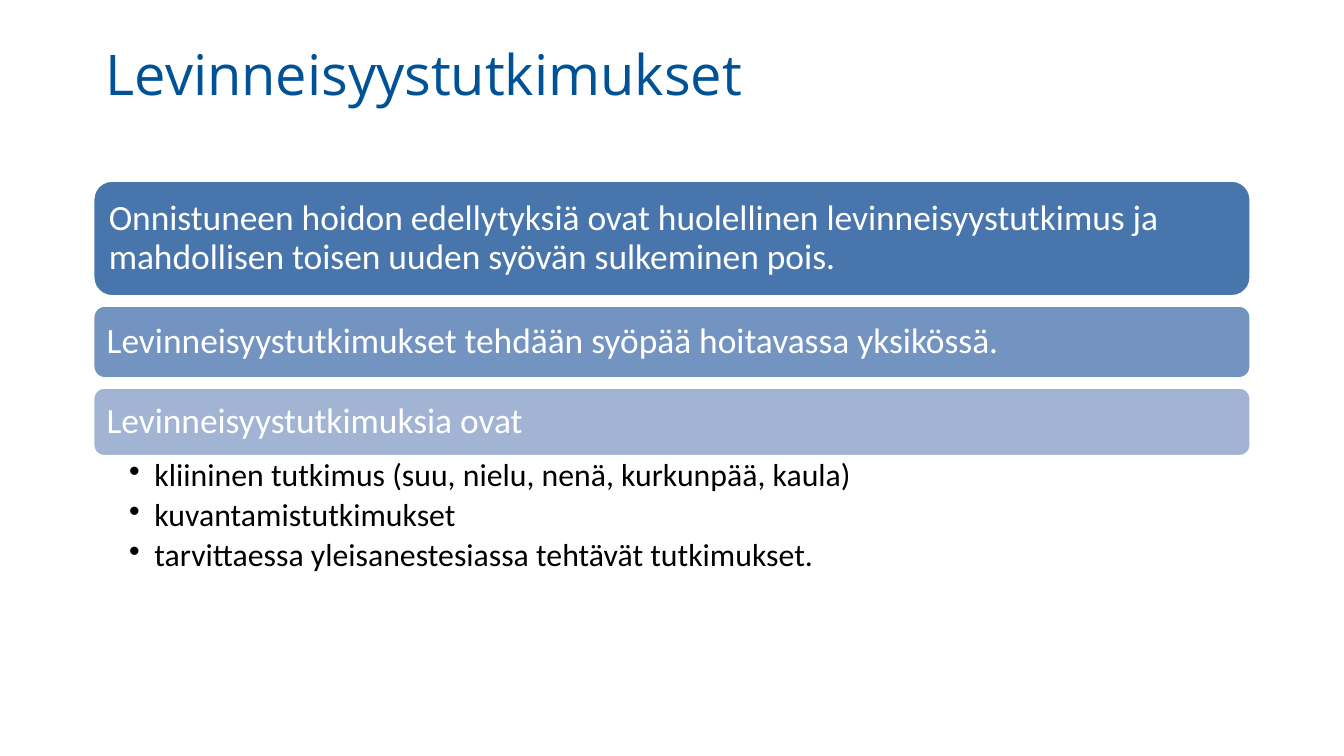
"""Build the slide on staging examinations."""
from lxml import etree
from pptx import Presentation
from pptx.dml.color import RGBColor
from pptx.enum.shapes import MSO_SHAPE
from pptx.enum.text import MSO_ANCHOR, MSO_AUTO_SIZE, PP_ALIGN
from pptx.oxml.ns import qn
from pptx.util import Cm, Pt

ROUND = MSO_SHAPE.ROUNDED_RECTANGLE
MIDDLE, TOP = MSO_ANCHOR.MIDDLE, MSO_ANCHOR.TOP
LEFT = PP_ALIGN.LEFT
FIXED = MSO_AUTO_SIZE.NONE

TITLE = "Levinneisyystutkimukset"
BARS = [
    ("Onnistuneen hoidon edellytyksiä ovat huolellinen levinneisyystutkimus ja "
     "mahdollisen toisen uuden syövän sulkeminen pois.", 2.21, "4875AC"),
    ("Levinneisyystutkimukset tehdään syöpää hoitavassa yksikössä.", 1.4, "7393C1"),
    ("Levinneisyystutkimuksia ovat", 1.32, "A2B4D4"),
]
EXAMS = [
    "kliininen tutkimus (suu, nielu, nenä, kurkunpää, kaula)",
    "kuvantamistutkimukset",
    "tarvittaessa yleisanestesiassa tehtävät tutkimukset.",
]
THEME = {
    "title": ("Open Sans", 30, "005296"),
    "bar": ("Calibri", 19, "FFFFFF"),
    "list": ("Calibri", 17, "000000"),
    "edge": "FFFFFF",
}
X, WIDTH = 1.75, 21.9
START, GAP = 3.4, 0.15


def style(par, role):
    name, size, color = THEME[role]
    par.alignment = LEFT
    par.font.name = name
    par.font.size = Pt(size)
    par.font.color.rgb = RGBColor.from_string(color)


def setup(frame, anchor, left, top, right):
    frame.word_wrap = True
    frame.auto_size = FIXED
    frame.vertical_anchor = anchor
    frame.margin_left, frame.margin_right = Cm(left), Cm(right)
    frame.margin_top = frame.margin_bottom = Cm(top)


def add_title(slide):
    box = slide.shapes.title
    box.left, box.top, box.width, box.height = Cm(X), Cm(0.61), Cm(WIDTH), Cm(1.55)
    setup(box.text_frame, MIDDLE, 0.25, 0, 0.25)
    box.text_frame.text = TITLE
    style(box.text_frame.paragraphs[0], "title")


def add_bar(slide, text, y, height, color):
    bar = slide.shapes.add_shape(ROUND, Cm(X), Cm(y), Cm(WIDTH), Cm(height))
    bar.shadow.inherit = False
    bar.fill.solid()
    bar.fill.fore_color.rgb = RGBColor.from_string(color)
    bar.line.color.rgb = RGBColor.from_string(THEME["edge"])
    bar.line.width = Pt(2)
    setup(bar.text_frame, MIDDLE, 0.2, 0.2, 0.2)
    bar.text_frame.text = text
    par = bar.text_frame.paragraphs[0]
    par.line_spacing = 0.9
    style(par, "bar")


def add_list(slide, y):
    box = slide.shapes.add_textbox(Cm(X), Cm(y), Cm(WIDTH), Cm(2.41))
    frame = box.text_frame
    setup(frame, TOP, 0.69, 0.05, 0.33)
    frame.text = "\n".join(EXAMS)
    for par in frame.paragraphs:
        par.line_spacing = 0.9
        par.space_after = Pt(3)
        props = par._p.get_or_add_pPr()
        props.set("marL", str(Cm(0.48)))
        props.set("indent", str(-Cm(0.48)))
        etree.SubElement(props, qn("a:buChar"), char="•")
        style(par, "list")


def main():
    deck = Presentation()
    deck.slide_width, deck.slide_height = Cm(25.4), Cm(14.28)
    slide = deck.slides.add_slide(deck.slide_layouts[5])
    add_title(slide)
    y = START
    for text, height, color in BARS:
        add_bar(slide, text, y, height, color)
        y += height + GAP
    add_list(slide, y - GAP)
    deck.save("out.pptx")


if __name__ == "__main__":
    main()
